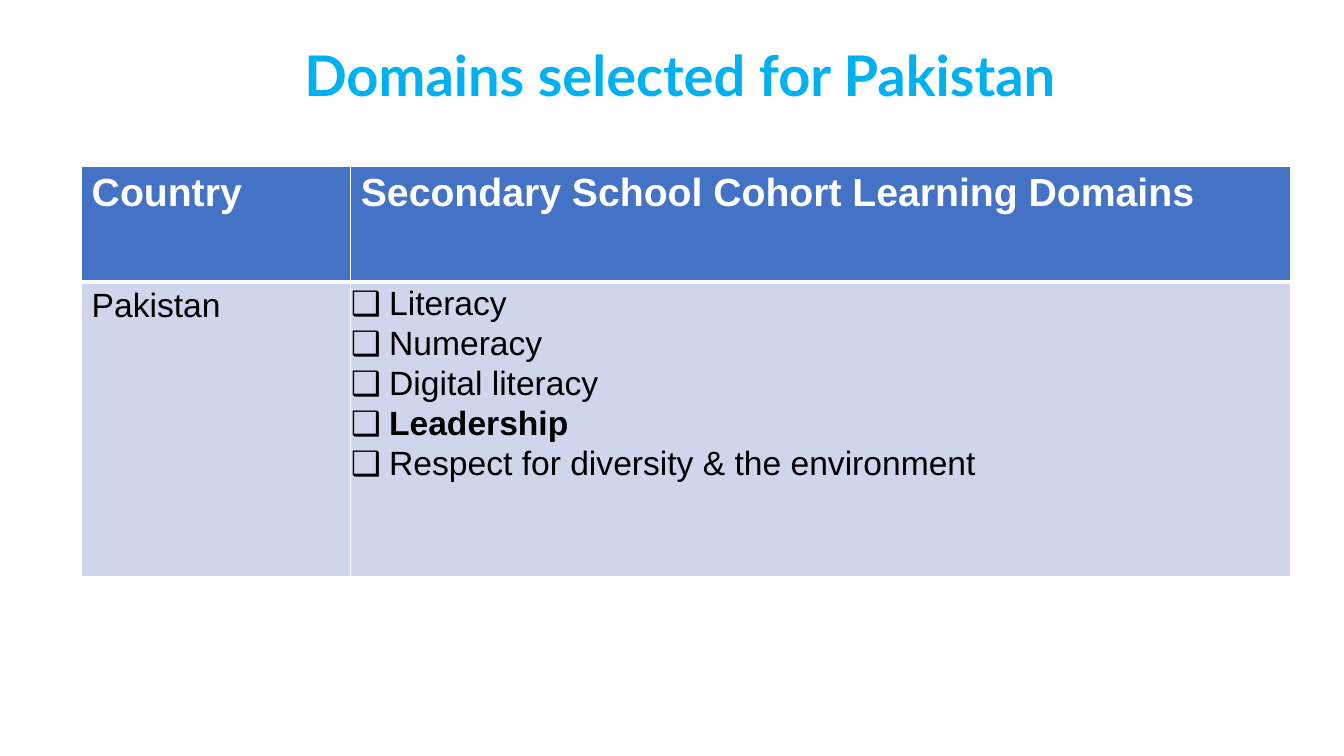
import dataclasses
import typing

import lxml.etree
import pptx
import pptx.dml.color
import pptx.enum.text
import pptx.oxml.ns
import pptx.util

Inches = pptx.util.Inches
qn = pptx.oxml.ns.qn


@dataclasses.dataclass(frozen=True)
class Theme:
    title_font: str = "Lato"
    table_font: str = "Arial"
    title_size: int = 40
    header_size: int = 28
    body_size: int = 24
    title_color: str = "00B0F0"
    header_fill: str = "4472C4"
    body_fill: str = "CFD5EA"
    white: str = "FFFFFF"
    black: str = "000000"


THEME = Theme()


@dataclasses.dataclass(frozen=True)
class Line:
    text: str
    bold: bool = False
    bullet: str = ""


@dataclasses.dataclass(frozen=True)
class RowStyle:
    height: float
    fill: str
    color: str
    size: int
    bottom_border: int


# Content
ROW_STYLES = [
    RowStyle(1.15, THEME.header_fill, THEME.white, THEME.header_size, 3),
    RowStyle(2.92, THEME.body_fill, THEME.black, THEME.body_size, 1),
]
COLUMN_WIDTHS = [2.67, 9.32]
DOMAINS = ["Literacy", "Numeracy", "Digital literacy", "Leadership",
           "Respect for diversity & the environment"]
ROWS = [
    [[Line("Country", bold=True)],
     [Line("Secondary School Cohort Learning Domains", bold=True)]],
    [[Line("Pakistan")],
     [Line(domain, domain == "Leadership", "❑") for domain in DOMAINS]],
]


def set_font(font: typing.Any, name: str, size: int, color: str, bold: bool) -> None:
    font.name, font.size, font.bold = name, pptx.util.Pt(size), bold
    font.color.rgb = pptx.dml.color.RGBColor.from_string(color)


def add_bullet(paragraph: typing.Any, bullet: str) -> None:
    paragraph.line_spacing = 1.07
    properties = paragraph._p.get_or_add_pPr()
    indent = Inches(0.38)
    properties.set("marL", str(indent))
    properties.set("indent", str(-indent))
    lxml.etree.SubElement(properties, qn("a:buFont"), typeface=THEME.table_font)
    lxml.etree.SubElement(properties, qn("a:buChar"), char=bullet)


def add_borders(cell: typing.Any, bottom_width: int) -> None:
    properties = cell._tc.get_or_add_tcPr()
    for side, width in {"L": 1, "R": 1, "T": 1, "B": bottom_width}.items():
        border = lxml.etree.SubElement(
            properties, qn(f"a:ln{side}"), w=str(pptx.util.Pt(width)))
        fill = lxml.etree.SubElement(border, qn("a:solidFill"))
        lxml.etree.SubElement(fill, qn("a:srgbClr"), val=THEME.white)


def fill_cell(cell: typing.Any, lines: list[Line], style: RowStyle) -> None:
    add_borders(cell, style.bottom_border)
    cell.fill.solid()
    cell.fill.fore_color.rgb = pptx.dml.color.RGBColor.from_string(style.fill)
    if lines[0].bullet:
        cell.margin_left = cell.margin_right = cell.margin_top = cell.margin_bottom = 0
    cell.text = "\n".join(line.text for line in lines)
    for paragraph, line in zip(cell.text_frame.paragraphs, lines):
        if line.bullet:
            add_bullet(paragraph, line.bullet)
        set_font(paragraph.font, THEME.table_font, style.size, style.color, line.bold)


def add_title(slide: typing.Any) -> None:
    title = slide.shapes.title
    title.left, title.top = Inches(0.52), Inches(0.43)
    title.width, title.height = Inches(12.58), Inches(1.08)
    title.text_frame.text = "Domains selected for Pakistan "
    title.text_frame.vertical_anchor = pptx.enum.text.MSO_ANCHOR.TOP
    heading = title.text_frame.paragraphs[0]
    heading.alignment = pptx.enum.text.PP_ALIGN.CENTER
    heading.line_spacing = 0.9
    set_font(heading.font, THEME.title_font, THEME.title_size, THEME.title_color, True)


def add_domain_table(slide: typing.Any) -> None:
    domain_table = slide.shapes.add_table(
        len(ROWS), len(COLUMN_WIDTHS), Inches(0.81), Inches(1.65),
        Inches(sum(COLUMN_WIDTHS)), Inches(sum(style.height for style in ROW_STYLES))).table
    domain_table.horz_banding = False
    for column, width in zip(domain_table.columns, COLUMN_WIDTHS):
        column.width = Inches(width)
    for row, cells, style in zip(domain_table.rows, ROWS, ROW_STYLES):
        row.height = Inches(style.height)
        for cell, lines in zip(row.cells, cells):
            fill_cell(cell, lines, style)


def main() -> None:
    presentation = pptx.Presentation()
    presentation.slide_width, presentation.slide_height = Inches(13.33), Inches(7.5)
    # Title-only layout
    slide = presentation.slides.add_slide(presentation.slide_layouts[5])
    add_domain_table(slide)
    add_title(slide)
    presentation.save("out.pptx")


if __name__ == "__main__":
    main()
